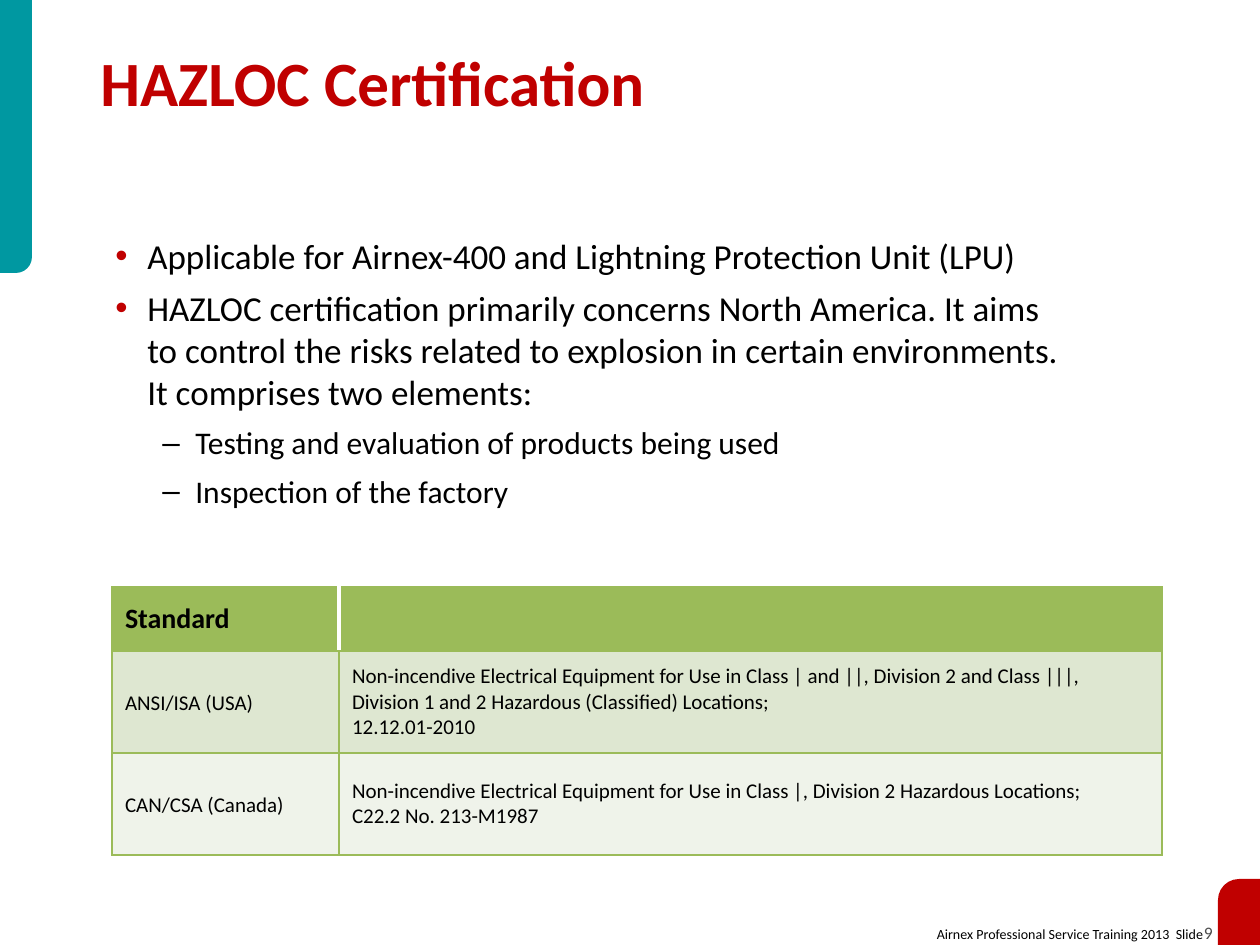
from dataclasses import dataclass

from lxml.etree import SubElement
from pptx import Presentation
from pptx.dml.color import RGBColor
from pptx.enum.shapes import MSO_SHAPE
from pptx.enum.text import MSO_ANCHOR, MSO_AUTO_SIZE, PP_ALIGN
from pptx.oxml.ns import qn
from pptx.util import Emu, Pt

PX_PER_INCH = 126
FONT = "Calibri"
COLORS = {
    "teal": "0098A1", "red": "C00000", "black": "000000", "gray": "4D4D4D",
    "white": "FFFFFF", "green": "9BBB59", "band1": "DEE7D1", "band2": "EFF3EA",
}


@dataclass
class Box:
    x: int
    y: int
    w: int
    h: int


@dataclass
class Tab:
    box: Box
    color: str
    flip: str


@dataclass
class Bullet:
    text: str
    level: int = 0


@dataclass
class BulletStyle:
    char: str
    color: str
    left: int
    hanging: int
    size: int


@dataclass
class StandardRow:
    name: str
    lines: list[str]
    fill: str


TABS = [
    Tab(Box(0, 0, 32, 273), "teal", "flipV"),
    Tab(Box(1218, 879, 42, 66), "red", "flipH"),
]
BULLET_STYLES = [
    BulletStyle("•", "red", 32, 32, 20),
    BulletStyle("–", "black", 80, 33, 18),
]
BULLETS = [
    Bullet("Applicable for Airnex-400 and Lightning Protection Unit (LPU)"),
    Bullet("HAZLOC certification primarily concerns North America. It aims to control "
           "the risks related to explosion in certain environments. "
           "It comprises two elements:"),
    Bullet("Testing and evaluation of products being used", 1),
    Bullet("Inspection of the factory", 1),
]
STANDARDS = [
    StandardRow("ANSI/ISA (USA)", [
        "Non-incendive Electrical Equipment for Use in Class | and ||, Division 2 and "
        "Class |||, Division 1 and 2 Hazardous (Classified) Locations;",
        "12.12.01-2010"], "band1"),
    StandardRow("CAN/CSA (Canada)", [
        "Non-incendive Electrical Equipment for Use in Class |, Division 2 "
        "Hazardous Locations;",
        "C22.2 No. 213-M1987"], "band2"),
]
TABLE_BOX = Box(112, 587, 1050, 263)
COL_WIDTHS = [227, 823]
ROW_HEIGHTS = [59, 102, 102]
CELL_MARGIN = 13


def px(n: int) -> Emu:
    return Emu(round(n * 914400 / PX_PER_INCH))


def rgb(name: str) -> RGBColor:
    return RGBColor.from_string(COLORS[name])


def place(box: Box) -> tuple[Emu, Emu, Emu, Emu]:
    return px(box.x), px(box.y), px(box.w), px(box.h)


def add_run(p, text: str, size: int, color: str = "black", bold: bool = False) -> None:
    r = p.add_run()
    r.text = text
    r.font.name = FONT
    r.font.size = Pt(size)
    r.font.bold = bold
    r.font.color.rgb = rgb(color)


def add_text_frame(s, box: Box, wrap: bool = True):
    tf = s.shapes.add_textbox(*place(box)).text_frame
    tf.word_wrap = wrap
    return tf


def add_tab(s, tab: Tab) -> None:
    sp = s.shapes.add_shape(MSO_SHAPE.ROUND_1_RECTANGLE, *place(tab.box))
    sp.adjustments[0] = 0.5
    sp.shadow.inherit = False
    sp.fill.solid()
    sp.fill.fore_color.rgb = rgb(tab.color)
    sp.line.fill.background()
    sp.element.spPr.find(qn("a:xfrm")).set(tab.flip, "1")


def add_bullet(p, bullet: Bullet) -> None:
    style = BULLET_STYLES[bullet.level]
    p.level = bullet.level
    pPr = p._p.get_or_add_pPr()
    pPr.set("marL", str(px(style.left)))
    pPr.set("indent", str(-px(style.hanging)))
    color = SubElement(pPr, qn("a:buClr"))
    SubElement(color, qn("a:srgbClr")).set("val", COLORS[style.color])
    SubElement(pPr, qn("a:buFont")).set("typeface", "Arial")
    SubElement(pPr, qn("a:buChar")).set("char", style.char)
    add_run(p, bullet.text, style.size)


def set_border(cell, side: str, color: str = "green", width: float = 1) -> None:
    ln = SubElement(cell._tc.get_or_add_tcPr(), qn(f"a:ln{side}"))
    ln.set("w", str(Pt(width)))
    fill = SubElement(ln, qn("a:solidFill"))
    SubElement(fill, qn("a:srgbClr")).set("val", COLORS[color])


def style_cell(cell, fill: str, divider: str = "") -> None:
    for side in "LRTB":
        if side == divider:
            set_border(cell, side, "white", 2.25)
        else:
            set_border(cell, side)
    cell.fill.solid()
    cell.fill.fore_color.rgb = rgb(fill)
    cell.vertical_anchor = MSO_ANCHOR.MIDDLE
    cell.margin_left = cell.margin_right = px(CELL_MARGIN)
    cell.margin_top = cell.margin_bottom = px(CELL_MARGIN)


def add_standards_table(s) -> None:
    table = s.shapes.add_table(len(ROW_HEIGHTS), len(COL_WIDTHS), *place(TABLE_BOX)).table
    table.first_row = table.horz_banding = False
    for col, width in zip(table.columns, COL_WIDTHS):
        col.width = px(width)
    for row, height in zip(table.rows, ROW_HEIGHTS):
        row.height = px(height)

    # Header row, split by a white divider
    for col, divider in enumerate("RL"):
        style_cell(table.cell(0, col), "green", divider)
    add_run(table.cell(0, 0).text_frame.paragraphs[0], "Standard", 16, bold=True)

    # One row for each standard
    for i, standard in enumerate(STANDARDS, start=1):
        name_cell, detail_cell = table.cell(i, 0), table.cell(i, 1)
        style_cell(name_cell, standard.fill)
        style_cell(detail_cell, standard.fill)
        p = name_cell.text_frame.paragraphs[0]
        p.line_spacing = 1.15
        add_run(p, standard.name, 12)
        tf = detail_cell.text_frame
        for j, line in enumerate(standard.lines):
            add_run(tf.add_paragraph() if j else tf.paragraphs[0], line, 12)


def main() -> None:
    prs = Presentation()
    prs.slide_width, prs.slide_height = px(1260), px(945)
    s = prs.slides.add_slide(prs.slide_layouts[6])

    # Footer
    tf = add_text_frame(s, Box(905, 916, 320, 34), wrap=False)
    tf.auto_size = MSO_AUTO_SIZE.SHAPE_TO_FIT_TEXT
    p = tf.paragraphs[0]
    p.alignment = PP_ALIGN.RIGHT
    add_run(p, "Airnex Professional Service Training 2013  Slide", 8)
    add_run(p, "9", 10, "gray")

    # Corner tabs
    for tab in TABS:
        add_tab(s, tab)

    # Title
    tf = add_text_frame(s, Box(88, 43, 956, 89))
    tf.vertical_anchor = MSO_ANCHOR.MIDDLE
    p = tf.paragraphs[0]
    p.line_spacing = 0.85
    add_run(p, "HAZLOC Certification", 36, "red", bold=True)

    # Bullets
    tf = add_text_frame(s, Box(103, 228, 982, 368))
    for i, bullet in enumerate(BULLETS):
        p = tf.add_paragraph() if i else tf.paragraphs[0]
        if i:
            p.space_before = Pt(6)
        add_bullet(p, bullet)

    # Standards table
    add_standards_table(s)

    prs.save("out.pptx")


if __name__ == "__main__":
    main()
